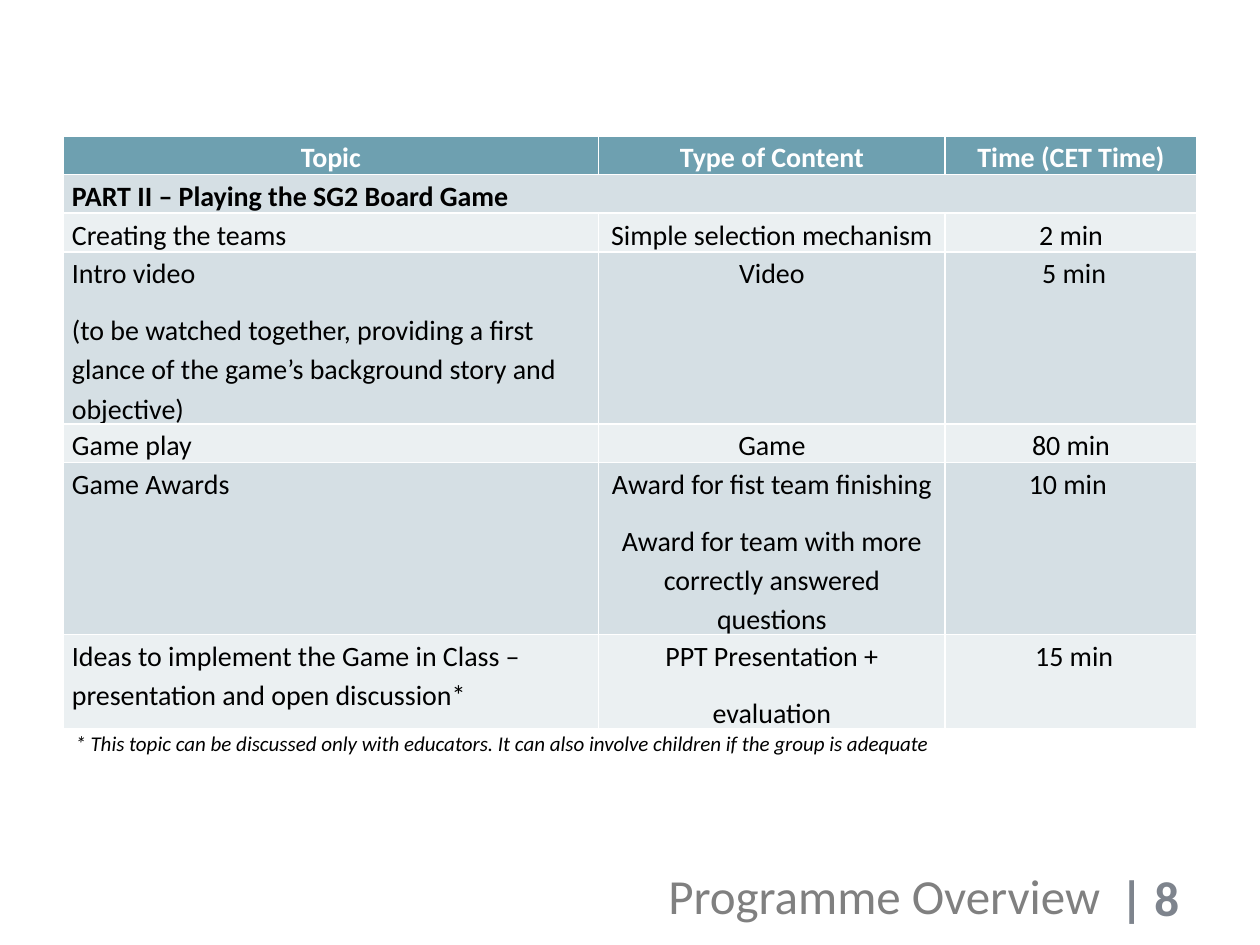
from pptx import Presentation
from pptx.dml.color import RGBColor as Rgb
from pptx.enum.text import MSO_ANCHOR as Anchor, MSO_AUTO_SIZE as Auto, PP_ALIGN as Align
from pptx.util import Cm, Pt

# Content
TITLE = "Programme Overview"
PAGE = "| 8"
NOTE = ("* This topic can be discussed only with educators. "
        "It can also involve children if the group is adequate")
HEAD = ["Topic", "Type of Content", "Time (CET Time)"]
PART = "PART II – Playing the SG2 Board Game"
ROWS = [
    ["Creating the teams", "Simple selection mechanism", "2 min"],
    ["Intro video\n(to be watched together, providing a first glance of "
     "the game’s background story and objective)", "Video", " 5 min"],
    ["Game play", "Game", "80 min"],
    ["Game Awards", "Award for fist team finishing\n"
     "Award for team with more correctly answered questions", "10 min "],
    ["Ideas to implement the Game in Class – presentation and open discussion*",
     "PPT Presentation +\nevaluation", " 15 min"],
]

# Theme
THEME = {
    "font": "Calibri",
    "head": "6EA0B0", "bands": ("D5DFE4", "EBF0F2"),
    "white": "FFFFFF", "black": "000000", "grey": "808080", "slate": "7E848D",
    "big": 28, "cell": 16, "small": 12,
}
WIDTHS = [10.8, 6.98, 5.08]
ROW_H = 0.76


def assign(obj, vals):
    for key, val in vals.items():
        setattr(obj, key, val)


def write(frame, text, size, color, align=Align.LEFT, para=None, **style):
    frame.text = text
    for par in frame.paragraphs:
        assign(par, {"alignment": align, **(para or {})})
        for run in par.runs:
            assign(run.font, {"name": THEME["font"], "size": Pt(THEME[size]), **style})
            run.font.color.rgb = Rgb.from_string(THEME[color])


def place(shape, left, top, width, height):
    assign(shape, {"left": Cm(left), "top": Cm(top),
                   "width": Cm(width), "height": Cm(height)})


def add_text(slide, box, text, size, color, wrap=True, **style):
    frame = slide.shapes.add_textbox(*map(Cm, box)).text_frame
    assign(frame, {"word_wrap": wrap, "auto_size": Auto.SHAPE_TO_FIT_TEXT})
    write(frame, text, size, color, **style)


def fill_cell(cell, text, fill, align, color="black", bold=False):
    assign(cell, {"margin_left": Cm(0.18), "margin_right": Cm(0.18),
                  "margin_top": 0, "margin_bottom": 0})
    cell.fill.solid()
    cell.fill.fore_color.rgb = Rgb.from_string(fill)
    write(cell.text_frame, text, "cell", color, align,
          {"line_spacing": 1.15, "space_after": Pt(10)}, bold=bold)


def add_plan(slide):
    rows = [HEAD, [PART, "", ""]] + ROWS
    table = slide.shapes.add_table(
        len(rows), len(HEAD), Cm(1.27), Cm(2.74),
        Cm(sum(WIDTHS)), Cm(ROW_H * len(rows))).table
    table.horz_banding = False
    for col, width in zip(table.columns, WIDTHS):
        col.width = Cm(width)
    for r, texts in enumerate(rows):
        table.rows[r].height = Cm(ROW_H)  # grows with its text
        fill = THEME["bands"][(r - 1) % 2] if r else THEME["head"]
        for c, text in enumerate(texts):
            left = r > 0 and c == 0
            fill_cell(table.cell(r, c), text, fill,
                      Align.LEFT if left else Align.CENTER,
                      "black" if r else "white", bold=r < 2)
    table.cell(1, 0).merge(table.cell(1, len(HEAD) - 1))


def main():
    deck = Presentation()
    assign(deck, {"slide_width": Cm(25.4), "slide_height": Cm(19.05)})
    slide = deck.slides.add_slide(deck.slide_layouts[5])

    # Title and page number at the foot
    title = slide.shapes.title
    place(title, 0.84, 17.32, 21.59, 1.45)
    assign(title.text_frame, {"word_wrap": True, "auto_size": Auto.NONE,
                              "vertical_anchor": Anchor.MIDDLE})
    write(title.text_frame, TITLE, "big", "grey", Align.RIGHT)
    add_text(slide, (22.33, 17.37, 2.87, 1.45), PAGE, "big", "slate",
             wrap=False, bold=True)

    # Plan table and footnote
    add_plan(slide)
    add_text(slide, (1.27, 14.6, 22.86, 0.76), NOTE, "small", "black", italic=True)
    deck.save("out.pptx")


if __name__ == "__main__":
    main()
